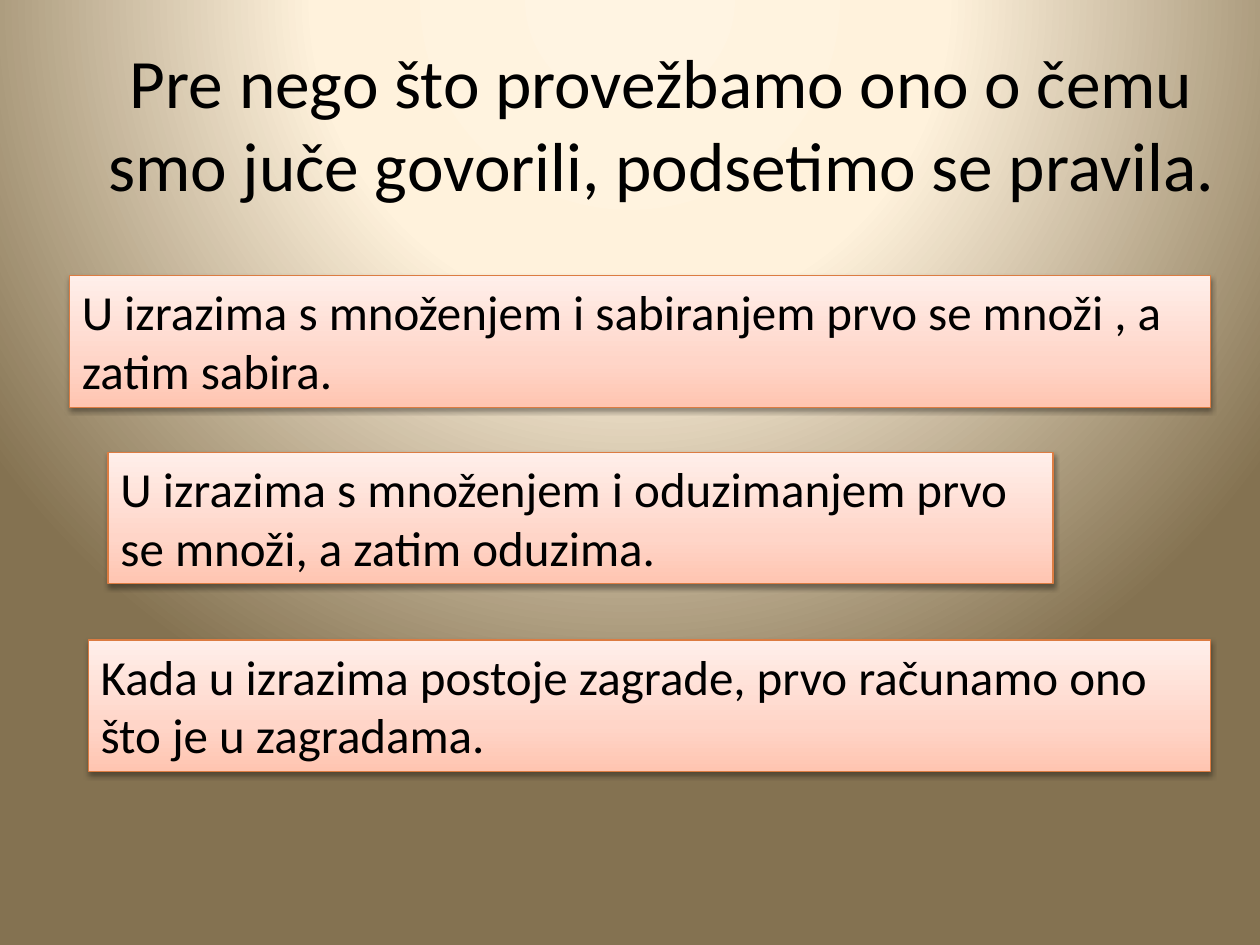
from typing import NamedTuple

from lxml.etree import SubElement
from pptx import Presentation
from pptx.dml.color import RGBColor
from pptx.enum.shapes import MSO_SHAPE
from pptx.enum.text import MSO_ANCHOR, PP_ALIGN
from pptx.oxml.ns import qn
from pptx.util import Cm, Pt

FONT = "Calibri"
TEXT_COLOR = "000000"
BOX_HEIGHT = 2.65
BOX_STOPS = [(0, "FFC5B1"), (35, "FFD5C8"), (100, "FFEFEA")]
PAGE_STOPS = [(0, "FFF4E2"), (40, "FFF2DC"), (100, "847251")]


class Rule(NamedTuple):
    """One rule box, with lengths in centimetres."""
    left: float
    top: float
    width: float
    text: str


RULES = [
    Rule(1.4, 5.56, 23.01, "U izrazima s množenjem i sabiranjem prvo se množi , a zatim sabira."),
    Rule(2.18, 9.12, 19.05, "U izrazima s množenjem i oduzimanjem prvo se množi, a zatim oduzima."),
    Rule(1.78, 12.9, 22.63, "Kada u izrazima postoje zagrade, prvo računamo ono što je u zagradama."),
]


def color(value: str) -> RGBColor:
    return RGBColor.from_string(value)


def gradient_for(properties, stops: list):
    """Replace the solid fill in the properties by a gradient without direction."""
    solid = properties.find(qn("a:solidFill"))
    gradient = properties.makeelement(qn("a:gradFill"), {"rotWithShape": "1"})
    stop_list = SubElement(gradient, qn("a:gsLst"))
    for position, value in stops:
        stop = SubElement(stop_list, qn("a:gs"), pos=str(position * 1000))
        SubElement(stop, qn("a:srgbClr"), val=value)
    properties.replace(solid, gradient)
    return gradient


def paint_background(page) -> None:
    page.background.fill.solid()
    properties = page.element.find(".//" + qn("p:bgPr"))
    gradient = gradient_for(properties, PAGE_STOPS)
    circle = SubElement(gradient, qn("a:path"), {"path": "circle"})
    SubElement(circle, qn("a:fillToRect"), l="50000", t="-80000", r="50000", b="180000")


def add_shadow(box) -> None:
    box.shadow.inherit = False
    effects = box.element.spPr.find(qn("a:effectLst"))
    shadow = SubElement(effects, qn("a:outerShdw"), blurRad=str(Pt(3.1)),
                        dist=str(Pt(1.6)), dir="5400000", rotWithShape="0")
    shade = SubElement(shadow, qn("a:srgbClr"), val="000000")
    SubElement(shade, qn("a:alpha"), val="38000")


def write(box, text: str, size: float, align: PP_ALIGN, anchor: MSO_ANCHOR) -> None:
    frame = box.text_frame
    frame.word_wrap = True
    frame.vertical_anchor = anchor
    para = frame.paragraphs[0]
    para.text = text
    para.alignment = align
    para.font.name = FONT
    para.font.size = Pt(size)
    para.font.color.rgb = color(TEXT_COLOR)


def add_rule(page, rule: Rule) -> None:
    box = page.shapes.add_shape(MSO_SHAPE.RECTANGLE, Cm(rule.left), Cm(rule.top),
                                Cm(rule.width), Cm(BOX_HEIGHT))
    box.fill.solid()
    gradient = gradient_for(box.element.spPr, BOX_STOPS)
    SubElement(gradient, qn("a:lin"), ang="16200000", scaled="0")
    box.line.color.rgb = color("DC7C42")
    box.line.width = Pt(0.75)
    add_shadow(box)
    write(box, rule.text, 28, PP_ALIGN.LEFT, MSO_ANCHOR.TOP)


def main() -> None:
    deck = Presentation()
    deck.slide_width, deck.slide_height = Cm(25.4), Cm(19.05)
    page = deck.slides.add_slide(deck.slide_layouts[6])
    paint_background(page)
    title = page.shapes.add_textbox(Cm(1.27), Cm(0.76), Cm(24.13), Cm(3.4))
    write(title, "Pre nego što provežbamo ono o čemu smo juče govorili, podsetimo se pravila.",
          39.6, PP_ALIGN.CENTER, MSO_ANCHOR.MIDDLE)
    for rule in RULES:
        add_rule(page, rule)
    deck.save("out.pptx")


if __name__ == "__main__":
    main()
